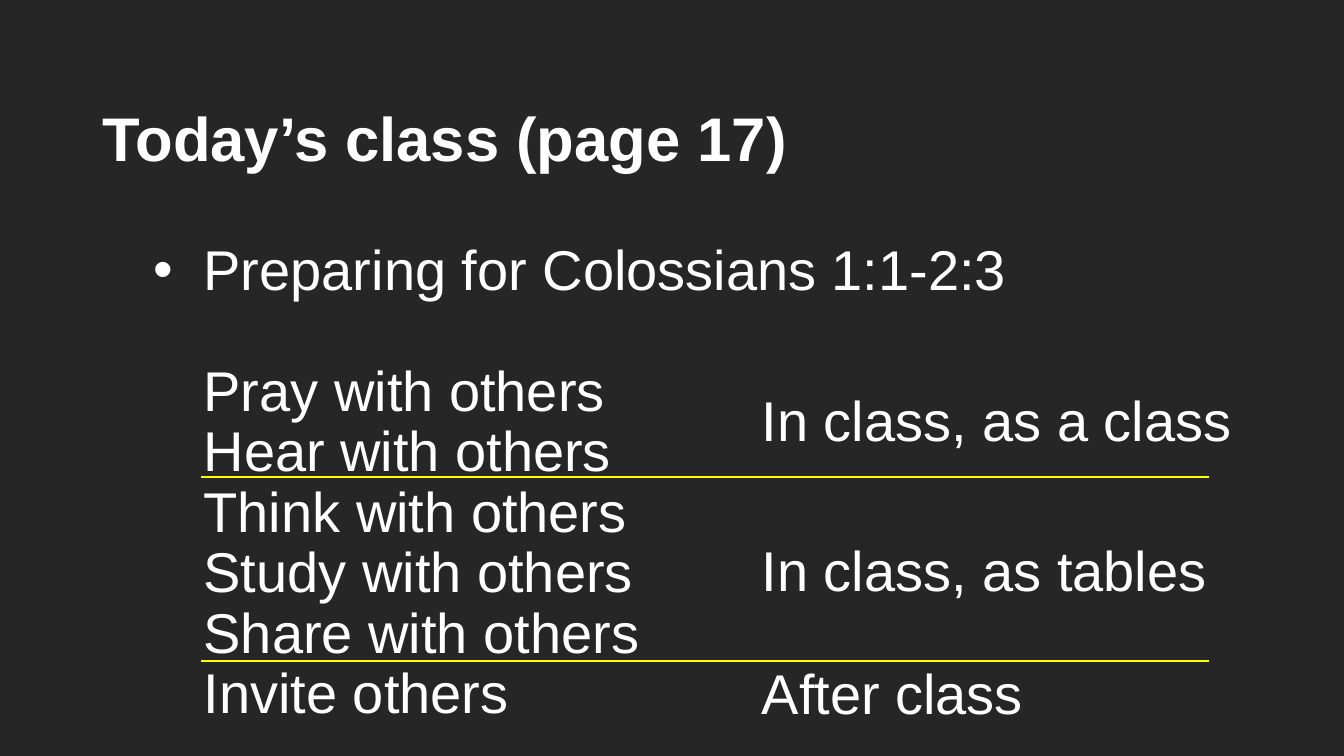
from lxml.etree import SubElement
from pptx import Presentation
from pptx.dml.color import RGBColor
from pptx.enum.shapes import MSO_CONNECTOR
from pptx.enum.text import MSO_ANCHOR, MSO_AUTO_SIZE, PP_ALIGN
from pptx.oxml.ns import qn
from pptx.util import Pt

CHARCOAL = RGBColor(0x26, 0x26, 0x26)
WHITE = RGBColor(0xFF, 0xFF, 0xFF)
YELLOW = RGBColor(0xFF, 0xFF, 0x00)

PRACTICES = ["Pray with others", "Hear with others", "Think with others",
             "Study with others", "Share with others", "Invite others"]
SETTINGS = [("In class, as a class", 277.2), ("In class, as tables", 384.5),
            ("After class", 472.3)]
DIVIDERS = [340.6, 472.3]
LINE_PITCH = 43.2


def write(paragraph, text, size=40, bold=False, bullet=None, margin=0,
          hanging=0, before=0):
    """Fill one paragraph with formatted text."""
    properties = paragraph._p.get_or_add_pPr()
    properties.set("marL", str(Pt(margin)))
    properties.set("indent", str(Pt(-hanging)))
    if bullet:
        SubElement(properties, qn("a:buFont"), typeface="Arial")
        SubElement(properties, qn("a:buChar"), char=bullet)
    else:
        SubElement(properties, qn("a:buNone"))
    paragraph.alignment = PP_ALIGN.LEFT
    paragraph.line_spacing = 0.9
    paragraph.space_before = Pt(before)
    paragraph.space_after = Pt(0)
    run = paragraph.add_run()
    run.text = text
    run.font.name = "Arial"
    run.font.size = Pt(size)
    run.font.bold = bold
    run.font.color.rgb = WHITE


class ClassSlide:
    """Holds the slide and its shared style."""

    def __init__(self, slide):
        self.slide = slide
        self.rule_color = YELLOW
        self.rule_width = Pt(1.5)
        slide.background.fill.solid()
        slide.background.fill.fore_color.rgb = CHARCOAL

    def frame(self, holder, left, top, width, height, anchor=MSO_ANCHOR.TOP):
        holder.left, holder.top = Pt(left), Pt(top)
        holder.width, holder.height = Pt(width), Pt(height)
        text_frame = holder.text_frame
        text_frame.word_wrap = True
        text_frame.auto_size = MSO_AUTO_SIZE.NONE
        text_frame.vertical_anchor = anchor
        return text_frame

    def title(self, text):
        heading = self.frame(self.slide.shapes.title, 66, 49, 828, 104.4,
                             MSO_ANCHOR.MIDDLE)
        write(heading.paragraphs[0], text, size=44, bold=True)

    def agenda(self, topic, practices):
        body = self.frame(self.slide.placeholders[1], 66, 169.2, 828, 316.8)
        write(body.paragraphs[0], topic, bullet="•", margin=72.3, hanging=36)
        for index, practice in enumerate(practices):
            write(body.add_paragraph(), practice, margin=72.3,
                  before=0 if index else LINE_PITCH)

    def label(self, text, top):
        box = self.slide.shapes.add_textbox(0, 0, 0, 0)
        setting = self.frame(box, 536.4, top, 357.8, 51.1)
        write(setting.paragraphs[0], text, margin=0.7)

    def divider(self, y):
        rule = self.slide.shapes.add_connector(
            MSO_CONNECTOR.STRAIGHT, Pt(863.3), Pt(y), Pt(143.3), Pt(y))
        rule.line.color.rgb = self.rule_color
        rule.line.width = self.rule_width
        SubElement(rule._element.spPr, qn("a:effectLst"))


def main():
    deck = Presentation()
    deck.slide_width, deck.slide_height = Pt(960), Pt(540)
    today = ClassSlide(deck.slides.add_slide(deck.slide_layouts[1]))

    # Title and list of practices
    today.title("Today’s class (page 17)")
    today.agenda("Preparing for Colossians 1:1-2:3", PRACTICES)

    # Lines between the groups
    for y in DIVIDERS:
        today.divider(y)

    # Where each group takes place
    for setting, top in SETTINGS:
        today.label(setting, top)

    deck.save("out.pptx")


if __name__ == "__main__":
    main()
